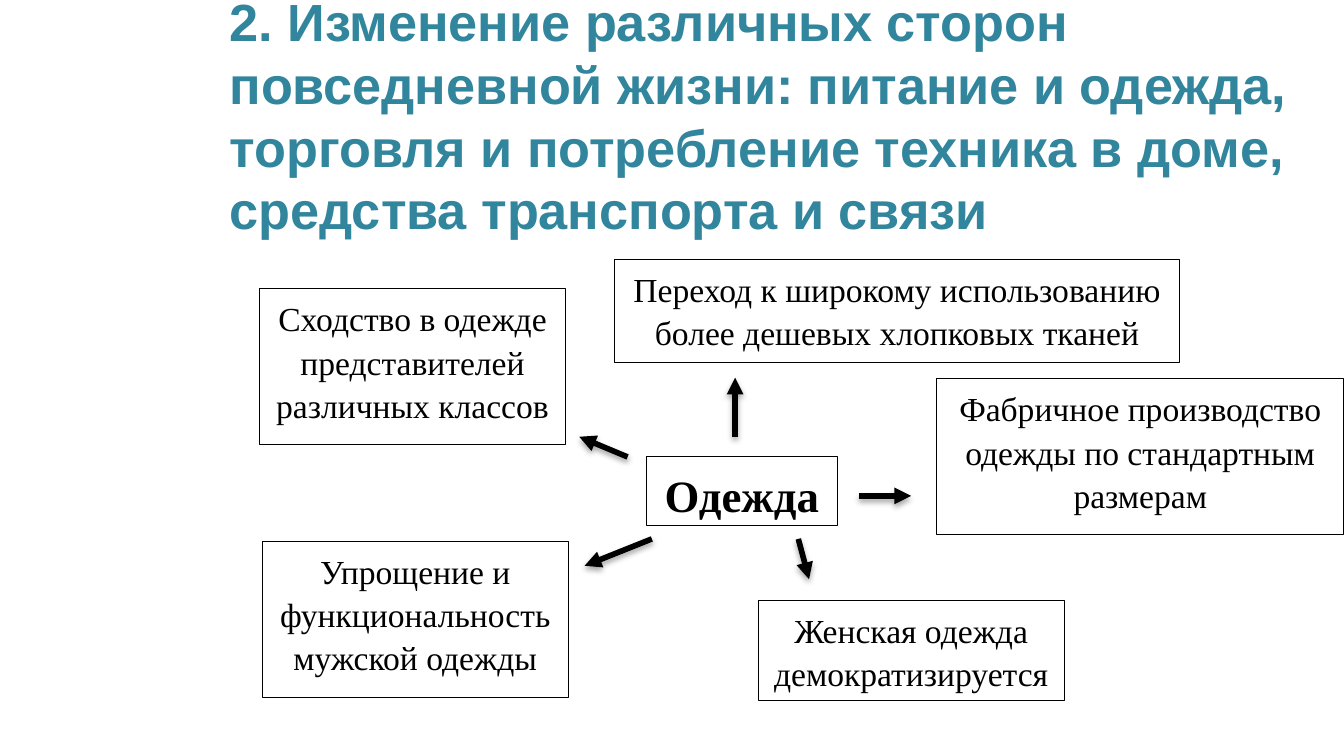
from lxml import etree
from pptx import Presentation
from pptx import util as u
from pptx.dml.color import RGBColor
from pptx.enum import shapes, text
from pptx.oxml.ns import qn

TEAL = RGBColor(0x31, 0x85, 0x9C)
BLACK = RGBColor(0, 0, 0)
WHITE = RGBColor(255, 255, 255)
WIDE = 10
HIGH = WIDE * 9 / 16
SIDE = 2.28
TALL = 1.16

TITLE = ("2. Изменение различных сторон повседневной жизни: питание и одежда, "
         "торговля и потребление техника в доме, средства транспорта и связи")
HUB = ("Одежда", 4.81, 3.4, 1.42, 0.51)
FACTS = [
    ("Переход к широкому использованию более дешевых хлопковых тканей",
     4.57, 1.93, 4.21, 0.77),
    ("Сходство в одежде представителей различных классов",
     1.93, 2.15, SIDE, TALL),
    ("Упрощение и функциональность мужской одежды",
     1.95, 4.03, SIDE, TALL),
    ("Женская одежда демократизируется", 5.64, 4.47, SIDE, 0.74),
    ("Фабричное производство одежды по стандартным размерам",
     6.97, 2.82, 3.03, TALL),
]
RAYS = [
    (5.47, 3.25, 5.47, 2.81),
    (6.39, 3.69, 6.78, 3.69),
    (5.94, 4.01, 6.02, 4.31),
    (4.67, 3.4, 4.31, 3.25),
    (4.85, 4.01, 4.35, 4.21),
]


def style(para, face, size, color, bold):
    for run in para.runs:
        font = run.font
        font.name = face
        font.size = u.Pt(size)
        font.color.rgb = color
        font.bold = bold


def add_title(slide):
    left = 1.61
    box = slide.shapes.add_textbox(
        u.Inches(left), 0, u.Inches(WIDE - left), u.Inches(1.71))
    frame = box.text_frame
    frame.word_wrap = True
    frame.vertical_anchor = text.MSO_ANCHOR.MIDDLE
    frame.text = TITLE
    style(frame.paragraphs[0], "Arial", 28, TEAL, True)


def add_box(slide, words, left, top, width, height, size=18, bold=False):
    box = slide.shapes.add_shape(
        shapes.MSO_SHAPE.RECTANGLE,
        *map(u.Inches, (left, top, width, height)))
    box.shadow.inherit = False
    box.fill.solid()
    box.fill.fore_color.rgb = WHITE
    box.line.color.rgb = BLACK
    box.line.width = u.Pt(0.5)
    frame = box.text_frame
    frame.word_wrap = True
    frame.vertical_anchor = text.MSO_ANCHOR.TOP
    frame.text = words
    para = frame.paragraphs[0]
    para.alignment = text.PP_ALIGN.CENTER
    para.line_spacing = 1.07
    para.space_after = u.Pt(8)
    style(para, "Times New Roman", size, BLACK, bold)


def add_shade(line):
    props = line._element.spPr
    effects = etree.SubElement(props, qn("a:effectLst"))
    shade = etree.SubElement(
        effects, qn("a:outerShdw"), blurRad=str(u.Pt(3.1)),
        dist=str(u.Pt(1.8)), dir="5400000", rotWithShape="0")
    color = etree.SubElement(shade, qn("a:srgbClr"), val=str(BLACK))
    etree.SubElement(color, qn("a:alpha"), val="35000")


def add_arrow(slide, *ends):
    line = slide.shapes.add_connector(
        shapes.MSO_CONNECTOR.STRAIGHT, *map(u.Inches, ends))
    line.line.color.rgb = BLACK
    line.line.width = u.Pt(3)
    etree.SubElement(line.line._get_or_add_ln(), qn("a:tailEnd"),
                     type="triangle")
    add_shade(line)


def main():
    deck = Presentation()
    deck.slide_width = u.Inches(WIDE)
    deck.slide_height = u.Inches(HIGH)
    slide = deck.slides.add_slide(deck.slide_layouts[6])
    add_title(slide)
    add_box(slide, *HUB, size=24, bold=True)
    for fact in FACTS:
        add_box(slide, *fact)
    for ray in RAYS:
        add_arrow(slide, *ray)
    deck.save("out.pptx")


if __name__ == "__main__":
    main()
